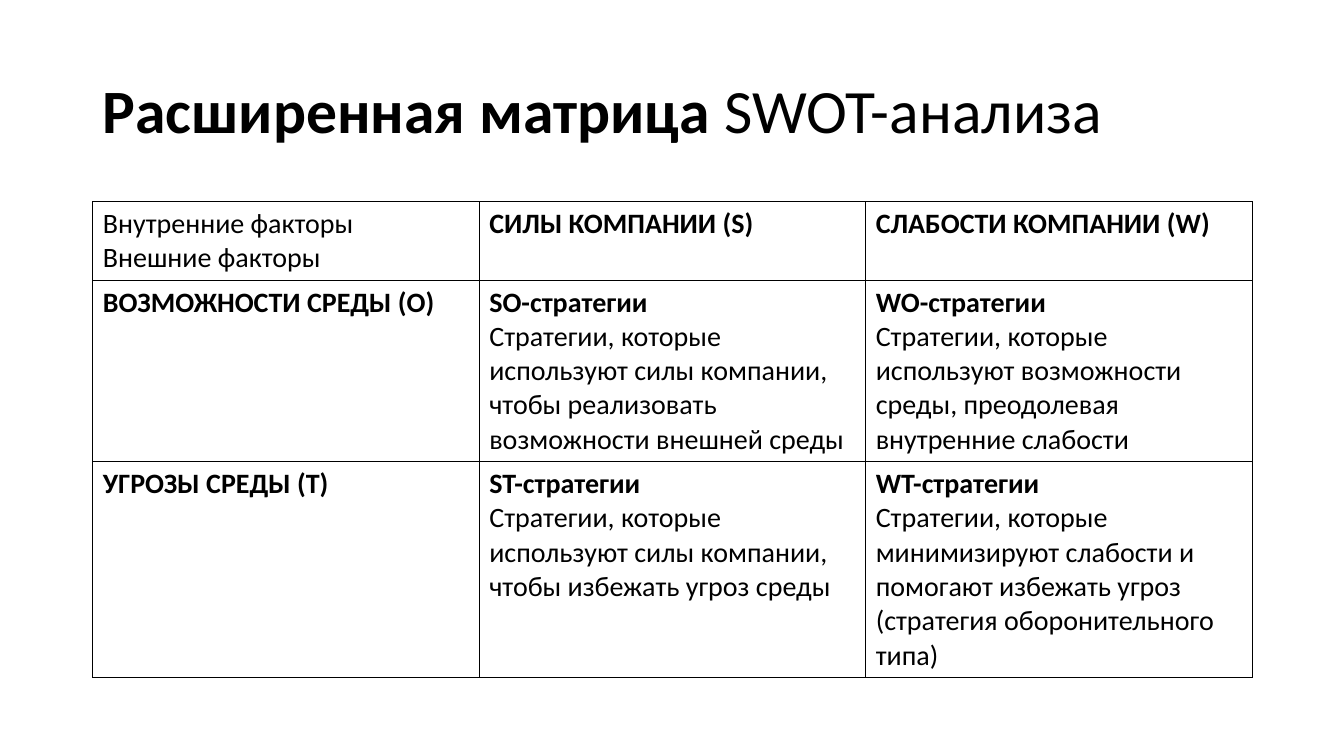
from lxml.etree import SubElement
from pptx import Presentation
from pptx.dml.color import RGBColor
from pptx.enum.text import MSO_ANCHOR, MSO_AUTO_SIZE, PP_ALIGN
from pptx.oxml.ns import qn
from pptx.util import Inches, Pt

BLACK = RGBColor(0x00, 0x00, 0x00)
FONT = "Calibri"

# Each text is a list of (words, bold)
TITLE = [("Расширенная матрица ", True), ("SWOT-анализа", False)]

# Each cell is a list of paragraphs
SWOT = [
    [
        [("Внутренние факторы", False), ("Внешние факторы", False)],
        [("СИЛЫ КОМПАНИИ (S)", True)],
        [("СЛАБОСТИ КОМПАНИИ (W)", True)],
    ],
    [
        [("ВОЗМОЖНОСТИ СРЕДЫ (O)", True)],
        [("SO-стратегии", True),
         ("Стратегии, которые используют силы компании, "
          "чтобы реализовать возможности внешней среды", False)],
        [("WO-стратегии", True),
         ("Стратегии, которые используют возможности среды, "
          "преодолевая внутренние слабости", False)],
    ],
    [
        [("УГРОЗЫ СРЕДЫ (T)", True)],
        [("ST-стратегии", True),
         ("Стратегии, которые используют силы компании, "
          "чтобы избежать угроз среды", False)],
        [("WT-стратегии", True),
         ("Стратегии, которые минимизируют слабости и помогают избежать угроз "
          "(стратегия оборонительного типа)", False)],
    ],
]
ROW_HEIGHTS = [0.78, 1.8, 2.14]
LEFT, WIDTH = 0.92, 11.5


def add_run(paragraph, words, bold, size):
    run = paragraph.add_run()
    run.text = words
    run.font.name = FONT
    run.font.size = Pt(size)
    run.font.bold = bold
    run.font.color.rgb = BLACK


def add_borders(cell):
    properties = cell._tc.get_or_add_tcPr()
    for side in ("a:lnL", "a:lnR", "a:lnT", "a:lnB"):
        line = SubElement(properties, qn(side), w=str(Pt(1)))
        fill = SubElement(line, qn("a:solidFill"))
        SubElement(fill, qn("a:srgbClr"), val=str(BLACK))


def add_title(slide):
    title = slide.shapes.title
    title.left, title.top = Inches(LEFT), Inches(0.4)
    title.width, title.height = Inches(WIDTH), Inches(1.45)
    frame = title.text_frame
    frame.auto_size = MSO_AUTO_SIZE.NONE
    frame.word_wrap = True
    frame.vertical_anchor = MSO_ANCHOR.MIDDLE
    heading = frame.paragraphs[0]
    heading.alignment = PP_ALIGN.LEFT
    heading.line_spacing = 0.9
    for words, bold in TITLE:
        add_run(heading, words, bold, 44)


def fill_cell(cell, paragraphs):
    add_borders(cell)
    cell.fill.background()
    frame = cell.text_frame
    for index, (words, bold) in enumerate(paragraphs):
        paragraph = frame.add_paragraph() if index else frame.paragraphs[0]
        add_run(paragraph, words, bold, 20)


def add_matrix(slide):
    matrix = slide.shapes.add_table(
        len(SWOT), len(SWOT[0]), Inches(LEFT), Inches(2),
        Inches(WIDTH), Inches(sum(ROW_HEIGHTS))).table
    matrix.first_row = matrix.horz_banding = False
    for row, height in zip(matrix.rows, ROW_HEIGHTS):
        row.height = Inches(height)
    for r, row in enumerate(SWOT):
        for c, paragraphs in enumerate(row):
            fill_cell(matrix.cell(r, c), paragraphs)


def main():
    deck = Presentation()
    deck.slide_width, deck.slide_height = Inches(13.33), Inches(7.5)
    slide = deck.slides.add_slide(deck.slide_layouts[5])
    add_title(slide)
    add_matrix(slide)
    deck.save("out.pptx")


if __name__ == "__main__":
    main()
